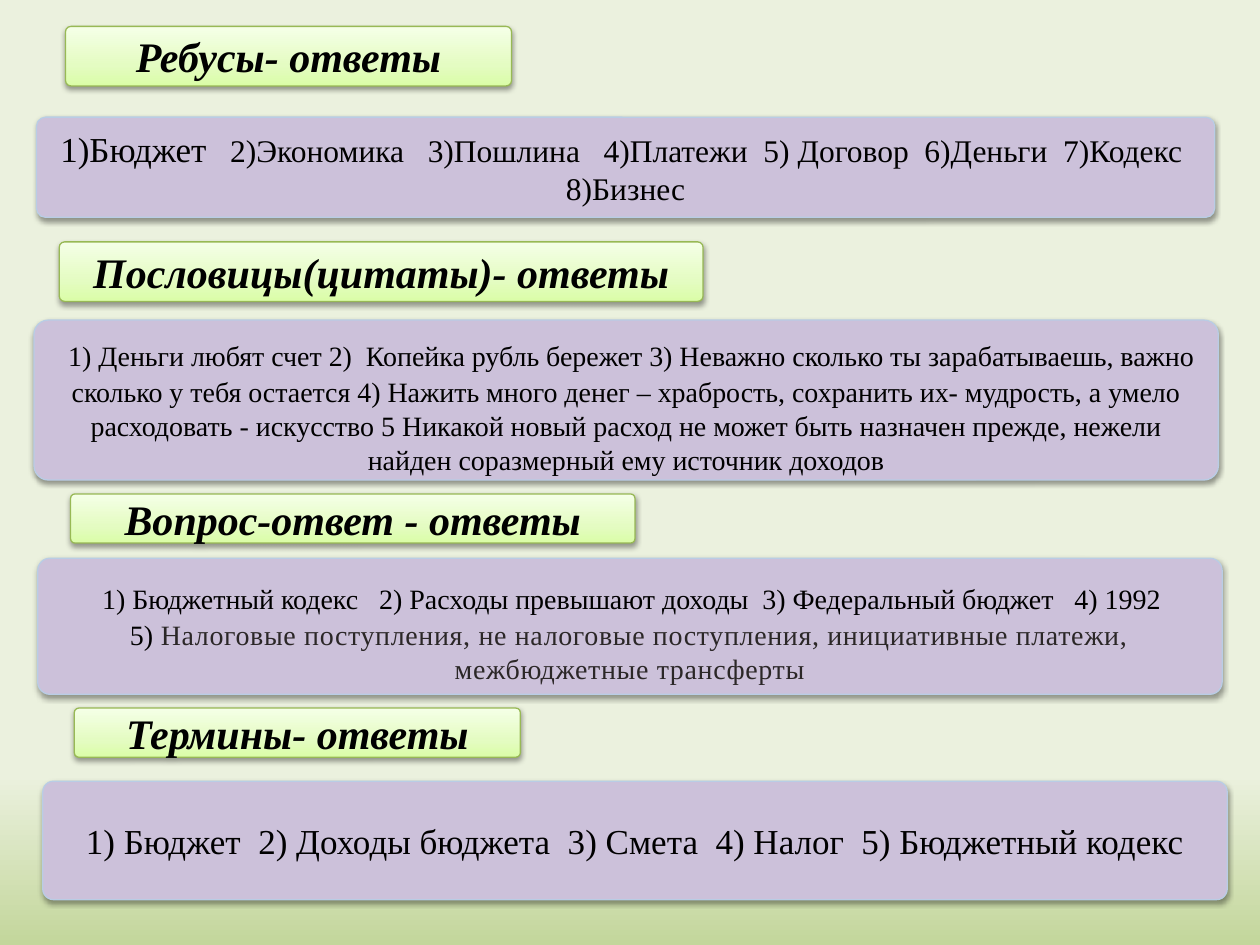
import pptx
import pptx.util
import pptx.dml.color
import pptx.enum.shapes
import pptx.enum.text
import pptx.oxml
import pptx.oxml.ns
from lxml import etree

Pt = pptx.util.Pt
RGB = pptx.dml.color.RGBColor
qn = pptx.oxml.ns.qn

BLACK = RGB(0x00, 0x00, 0x00)
DARK_GRAY = RGB(0x2B, 0x27, 0x27)
LILAC = RGB(0xCC, 0xC1, 0xDA)
PALE_BLUE = RGB(0xB9, 0xCD, 0xE5)
GREEN_LINE = RGB(0x98, 0xB9, 0x55)
GREEN_STOPS = [(0, RGB(0xDA, 0xFD, 0xA7)), (35, RGB(0xE4, 0xFC, 0xC2)),
               (100, RGB(0xF5, 0xFF, 0xE7))]
PAGE_STOPS = [(82, RGB(0xEB, 0xF1, 0xDE)), (100, RGB(0xC3, 0xD6, 0x9B))]

FONT = "Times New Roman"
WIDTH, HEIGHT = pptx.util.Inches(10), pptx.util.Inches(7.5)

# Each section: heading, heading box, answer box, answer paragraphs.
# Boxes are left, top, width, height in percent of the slide.
# Runs are text, size and, where needed, colour and letter spacing in points.
SECTIONS = [
    ("Ребусы- ответы", (5.2, 2.8, 35.4, 6.3), (2.9, 12.4, 93.5, 10.6),
     [[("1)Бюджет", 20),
       ("   2)Экономика   3)Пошлина   4)Платежи  5) Договор  6)Деньги"
        "  7)Кодекс  8)Бизнес", 18)]]),
    ("Пословицы(цитаты)- ответы", (4.7, 25.6, 51.1, 6.3), (2.7, 33.87, 94, 16.93),
     [[(" ", 24),
       ("1) Деньги любят счет 2)  Копейка рубль бережет 3) Неважно сколько ты "
        "зарабатываешь, важно сколько у тебя остается 4) Нажить много денег – "
        "храбрость, сохранить их- мудрость, а умело расходовать - искусство "
        "5 Никакой новый расход не может быть назначен прежде, нежели найден "
        "соразмерный ему источник доходов", 16)]]),
    ("Вопрос-ответ - ответы", (5.6, 52.27, 44.8, 5.2), (3, 59.07, 94, 14.4),
     [[(" ", 24),
       ("1) Бюджетный кодекс   2) Расходы превышают доходы  "
        "3) Федеральный бюджет   4) 1992 ", 16)],
      [("5)", 16),
       (" Налоговые поступления, не налоговые поступления, инициативные "
        "платежи, межбюджетные трансферты", 16, DARK_GRAY, 0.4)]]),
    ("Термины- ответы", (5.9, 74.93, 35.4, 5.2), (3.4, 82.67, 94, 12.53),
     [[("1) Бюджет  2) Доходы бюджета  3) Смета  4) Налог  "
        "5) Бюджетный кодекс", 20)]]),
]


def set_gradient(fill, owner, stops, angle):
    """Fill with any number of stops; angle runs counter-clockwise."""
    fill.gradient()
    fill.gradient_angle = angle
    gs_list = owner.find(".//" + qn("a:gsLst"))
    for gs in list(gs_list):
        gs_list.remove(gs)
    for percent, color in stops:
        gs = etree.SubElement(gs_list, qn("a:gs"), pos=str(percent * 1000))
        etree.SubElement(gs, qn("a:srgbClr"), val=str(color))


def add_shadow(sp):
    sp.shadow.inherit = False
    effects = sp.element.spPr.find(qn("a:effectLst"))
    shadow = etree.SubElement(effects, qn("a:outerShdw"), blurRad=str(Pt(3.1)),
                              dist=str(Pt(1.6)), dir="5400000", rotWithShape="0")
    color = etree.SubElement(shadow, qn("a:srgbClr"), val=str(BLACK))
    etree.SubElement(color, qn("a:alpha"), val="38000")


def add_panel(slide, box, line_color):
    x, y, w, h = box
    sp = slide.shapes.add_shape(
        pptx.enum.shapes.MSO_SHAPE.ROUNDED_RECTANGLE,
        int(WIDTH * x / 100), int(HEIGHT * y / 100),
        int(WIDTH * w / 100), int(HEIGHT * h / 100))
    sp.adjustments[0] = 0.09
    sp.line.color.rgb = line_color
    sp.line.width = Pt(0.75)
    sp.text_frame.word_wrap = True
    sp.text_frame.vertical_anchor = pptx.enum.text.MSO_ANCHOR.MIDDLE
    return sp


def format_paragraph(p):
    p.alignment = pptx.enum.text.PP_ALIGN.CENTER
    p.font.name = FONT
    p.font.color.rgb = BLACK


def add_heading(slide, box, text):
    sp = add_panel(slide, box, GREEN_LINE)
    set_gradient(sp.fill, sp.element, GREEN_STOPS, 90)
    add_shadow(sp)
    p = sp.text_frame.paragraphs[0]
    p.text = text
    format_paragraph(p)
    p.font.size = Pt(24)
    p.font.bold = p.font.italic = True


def add_run(p, text, size, color=None, spacing=None):
    r = p.add_run()
    r.text = text
    r.font.size = Pt(size)
    if color is not None:
        r.font.color.rgb = color
    if spacing is not None:
        r.font._element.set("spc", str(round(spacing * 100)))


def add_answers(slide, box, paragraphs):
    sp = add_panel(slide, box, PALE_BLUE)
    sp.fill.solid()
    sp.fill.fore_color.rgb = LILAC
    add_shadow(sp)
    tf = sp.text_frame
    for i, runs in enumerate(paragraphs):
        p = tf.add_paragraph() if i else tf.paragraphs[0]
        format_paragraph(p)
        for run in runs:
            add_run(p, *run)


def main():
    prs = pptx.Presentation()
    prs.slide_width, prs.slide_height = WIDTH, HEIGHT
    slide = prs.slides.add_slide(prs.slide_layouts[6])
    set_gradient(slide.background.fill, slide.element, PAGE_STOPS, 270)
    for heading, heading_box, answer_box, paragraphs in SECTIONS:
        add_heading(slide, heading_box, heading)
        add_answers(slide, answer_box, paragraphs)
    prs.save("out.pptx")


if __name__ == "__main__":
    main()
